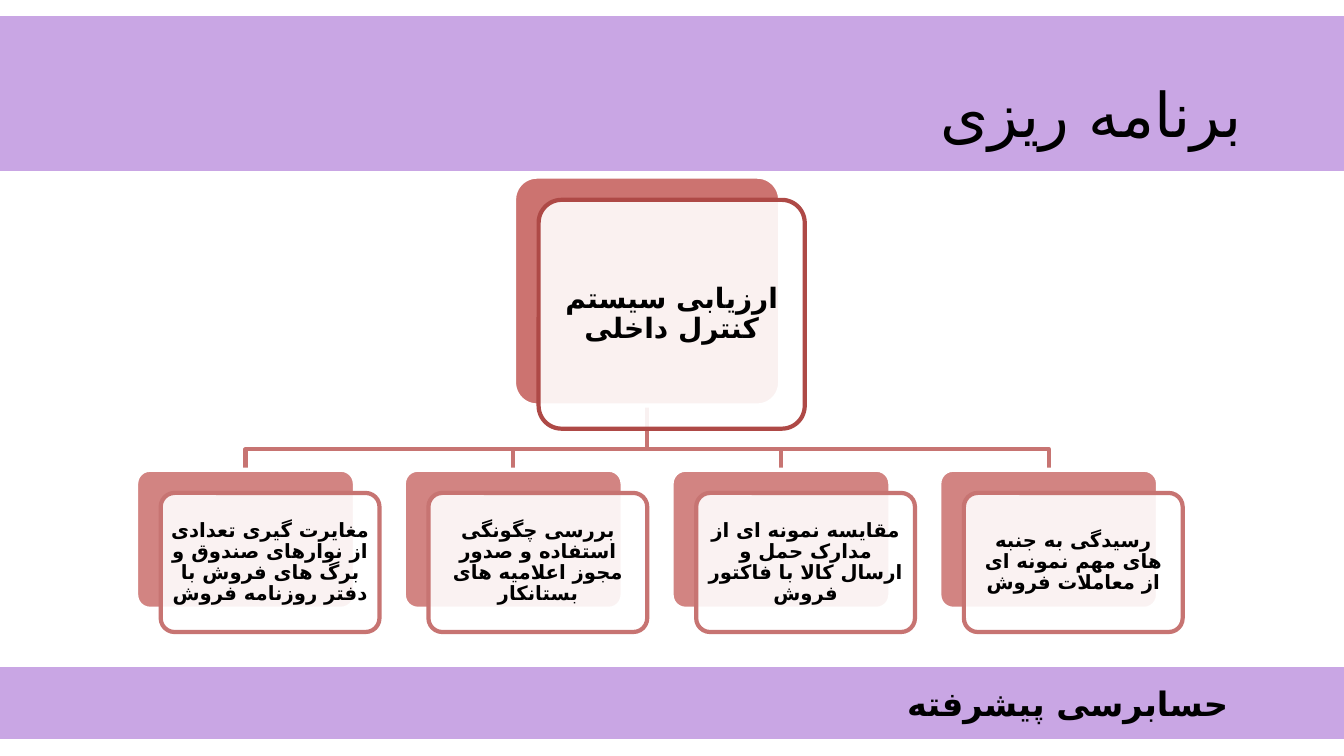
from lxml import etree
from pptx import Presentation
from pptx import util as u
from pptx.dml.color import RGBColor
from pptx.enum import shapes, text
from pptx.oxml.ns import qn

WIDE, HIGH = u.Inches(13.33), u.Inches(7.5)
FONT, ARAB = "Calibri", "DejaVu Sans"
HUES = {"band": "C9A6E4", "red": "C0504D", "dark": "AE4946",
        "rose": "C77472", "white": "FFFFFF", "ink": "000000"}
ROOT = "ارزیابی سیستم کنترل داخلی"
TASKS = [
    "مغایرت گیری تعدادی از نوارهای صندوق و برگ های فروش با دفتر روزنامه فروش",
    "بررسی چگونگی استفاده و صدور مجوز اعلامیه های بستانکار",
    "مقایسه نمونه ای از مدارک حمل و ارسال کالا با فاکتور فروش",
    "رسیدگی به جنبه های مهم نمونه ای از معاملات فروش",
]
LEFT, STEP = 10.13, 19.92
TASK_W, TASK_H, TASK_Y = 16.28, 18.4, 62.13
ROOT_W, ROOT_H, ROOT_Y = 19.8, 30.27, 23.37
SHIFT_X, SHIFT_Y = 1.83, 3.07
BEND = 59.43


def across(part):
    """Turn a percentage of the slide's width into a length."""
    return int(WIDE * part / 100)


def down(part):
    """Turn a percentage of the slide's height into a length."""
    return int(HIGH * part / 100)


def place(x, y, w, h):
    """Turn percentages into left, top, width and height."""
    return across(x), down(y), across(w), down(h)


def hue(name):
    """Look up a colour."""
    return RGBColor.from_string(HUES[name])


def stroke(shape, name):
    """Give a shape its three-point line and no shadow."""
    shape.shadow.inherit = False
    shape.line.color.rgb = hue(name)
    shape.line.width = u.Pt(3)


def write(shape, words, size, bold=True, align="CENTER", rtl=True,
          pad=(0.1, 0.05, 0.1, 0.05), gap=1.0):
    """Write one formatted paragraph into a shape."""
    frame = shape.text_frame
    frame.word_wrap = True
    frame.vertical_anchor = text.MSO_ANCHOR.MIDDLE
    (frame.margin_left, frame.margin_top,
     frame.margin_right, frame.margin_bottom) = map(u.Inches, pad)
    para = frame.paragraphs[0]
    para.alignment = text.PP_ALIGN[align]
    para.line_spacing = gap
    if rtl:
        para._p.get_or_add_pPr().set("rtl", "1")
    run = para.add_run()
    run.text = words
    font = run.font
    font.size, font.bold, font.name = u.Pt(size), bold, FONT
    font.color.rgb = hue("ink")
    etree.SubElement(run._r.rPr, qn("a:cs"), typeface=ARAB)


def block(slide, kind, spot, fill, line, alpha=100):
    """Draw a filled and outlined preset shape."""
    shape = slide.shapes.add_shape(kind, *place(*spot))
    stroke(shape, line)
    shape.fill.solid()
    shape.fill.fore_color.rgb = hue(fill)
    if alpha < 100:
        tint = shape.fill._xPr.find(qn("a:solidFill"))[0]
        etree.SubElement(tint, qn("a:alpha"), val=str(alpha * 1000))
    return shape


def band(slide, y, h):
    """Draw a band over the full width."""
    return block(slide, shapes.MSO_SHAPE.RECTANGLE, (0, y, 100, h), "band", "band")


def card(slide, spot, words, size, line, alpha, pad, rtl):
    """Draw a tinted box with a captioned box shifted over it."""
    x, y, w, h = spot
    kind = shapes.MSO_SHAPE.ROUNDED_RECTANGLE
    back = block(slide, kind, spot, "red", "white", alpha)
    front = block(slide, kind, (x + SHIFT_X, y + SHIFT_Y, w, h), "white", line, 90)
    for shape in (back, front):
        shape.adjustments[0] = 0.1
    write(front, words, size, rtl=rtl, pad=(pad,) * 4, gap=0.9)


def branch(slide, start, end):
    """Draw the bent line from the root down to a task."""
    x, y = start
    stop, low = end
    path = [(x, BEND), (stop, BEND), (stop, low)]
    pen = slide.shapes.build_freeform(across(x), down(y), scale=1.0)
    pen.add_line_segments([(across(a), down(b)) for a, b in path], close=False)
    shape = pen.convert_to_shape()
    shape.fill.background()
    stroke(shape, "rose")


def main():
    """Build the slide and save it."""
    deck = Presentation()
    deck.slide_width, deck.slide_height = WIDE, HIGH
    slide = deck.slides.add_slide(deck.slide_layouts[6])

    lefts = [LEFT + STEP * i for i in range(len(TASKS))]
    mid = (lefts[0] + lefts[-1] + TASK_W) / 2
    for x in reversed(lefts):
        branch(slide, (mid, ROOT_Y + ROOT_H), (x + TASK_W / 2, TASK_Y))
    card(slide, (mid - ROOT_W / 2, ROOT_Y, ROOT_W, ROOT_H),
         ROOT, 20, "dark", 80, 0.08, False)
    for x, words in zip(lefts, TASKS):
        card(slide, (x, TASK_Y, TASK_W, TASK_H), words, 14, "rose", 70, 0.06, True)

    band(slide, 2.4, 19.93)
    foot = band(slide, 88.53, 8.93)
    write(foot, "حسابرسی پیشرفته", 24, align="RIGHT", pad=(0.1, 0.05, 1.15, 0.05))
    title = slide.shapes.add_textbox(*place(6.9, 5.33, 86.27, 19.33))
    write(title, "برنامه ریزی", 44, bold=False, align="RIGHT")
    deck.save("out.pptx")


if __name__ == "__main__":
    main()
